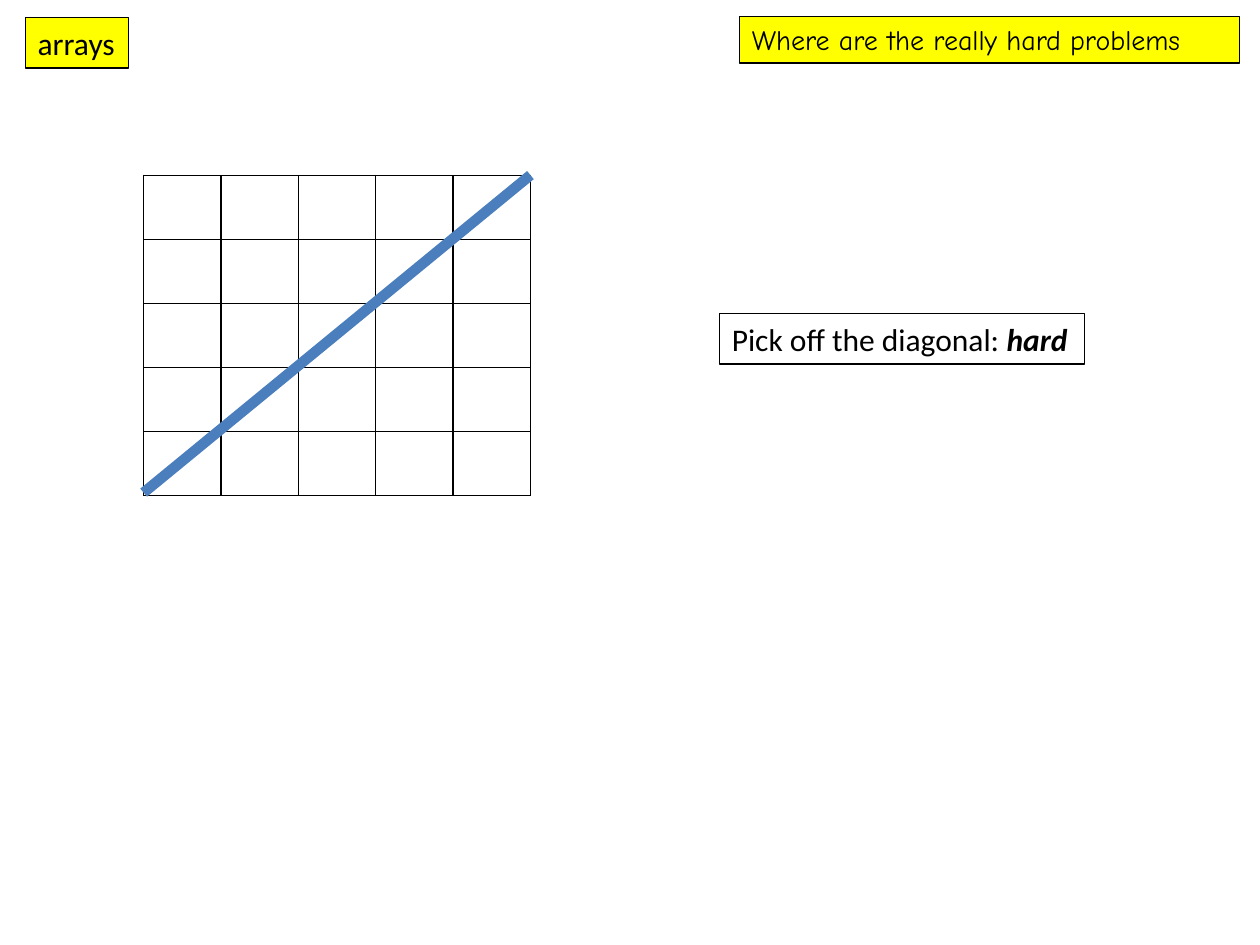
import dataclasses
from typing import Optional

import lxml.etree
import pptx
import pptx.dml.color
import pptx.enum.shapes
import pptx.enum.text
import pptx.oxml.ns
import pptx.slide
import pptx.table
import pptx.util

COLOURS = {"ink": "000000", "label": "FFFF00", "diagonal": "4B7EBC"}
GRID_SIZE = 5
GRID_LEFT, GRID_TOP = 82.08, 100.08
CELL_WIDTH, CELL_HEIGHT = 44.21, 36.58
BORDER_WIDTH = 0.75


@dataclasses.dataclass(frozen=True)
class Label:
    """A framed line of text, with an optional emphasised ending."""

    text: str
    left: float
    top: float
    width: float
    height: float
    size: float = 18
    font: str = "Calibri"
    fill: Optional[str] = None
    emphasis: str = ""


HEADING = Label("Where are the really hard problems", 422.64, 9.36, 285.84, 26.64,
                size=16, font="Comic Neue", fill="label")
LABELS = (
    Label("arrays", 14.4, 10.08, 59.04, 28.8, fill="label"),
    Label("Pick off the diagonal: ", 411.12, 179.28, 208.8, 28.8, emphasis="hard"),
)


def colour(name: str) -> pptx.dml.color.RGBColor:
    """Return the named colour."""
    return pptx.dml.color.RGBColor.from_string(COLOURS[name])


def draw_label(slide: pptx.slide.Slide, label: Label) -> None:
    """Draw one framed label."""
    shape = slide.shapes.add_textbox(
        *map(pptx.util.Pt, (label.left, label.top, label.width, label.height)))
    shape.line.color.rgb = colour("ink")
    shape.line.width = pptx.util.Pt(BORDER_WIDTH)
    if label.fill:
        shape.fill.solid()
        shape.fill.fore_color.rgb = colour(label.fill)
    text_frame = shape.text_frame
    text_frame.word_wrap = False
    text_frame.auto_size = pptx.enum.text.MSO_AUTO_SIZE.SHAPE_TO_FIT_TEXT
    text_frame.text = label.text
    paragraph = text_frame.paragraphs[0]
    if label.emphasis:
        run = paragraph.add_run()
        run.text = label.emphasis
        run.font.bold = run.font.italic = True
    for run in paragraph.runs:
        run.font.name = label.font
        run.font.size = pptx.util.Pt(label.size)
        run.font.color.rgb = colour("ink")


def style_cell(cell: pptx.table._Cell) -> None:
    """Clear the fill of a cell and rule its four sides."""
    cell.fill.background()
    properties = cell._tc.get_or_add_tcPr()
    for position, side in enumerate(("lnL", "lnR", "lnT", "lnB")):
        border = lxml.etree.Element(pptx.oxml.ns.qn(f"a:{side}"),
                                    w=str(pptx.util.Pt(BORDER_WIDTH)))
        fill = lxml.etree.SubElement(border, pptx.oxml.ns.qn("a:solidFill"))
        lxml.etree.SubElement(fill, pptx.oxml.ns.qn("a:srgbClr"), val=COLOURS["ink"])
        properties.insert(position, border)


def draw_grid(slide: pptx.slide.Slide) -> None:
    """Draw the empty square array."""
    table = slide.shapes.add_table(
        GRID_SIZE, GRID_SIZE, pptx.util.Pt(GRID_LEFT), pptx.util.Pt(GRID_TOP),
        pptx.util.Pt(GRID_SIZE * CELL_WIDTH), pptx.util.Pt(GRID_SIZE * CELL_HEIGHT)).table
    table.first_row = table.horz_banding = False
    for column in table.columns:
        column.width = pptx.util.Pt(CELL_WIDTH)
    for row in table.rows:
        row.height = pptx.util.Pt(CELL_HEIGHT)
    for cell in table.iter_cells():
        style_cell(cell)


def draw_diagonal(slide: pptx.slide.Slide) -> None:
    """Draw the thick line from the lower left to the upper right of the array."""
    connector = slide.shapes.add_connector(
        pptx.enum.shapes.MSO_CONNECTOR.STRAIGHT,
        pptx.util.Pt(GRID_LEFT), pptx.util.Pt(281.52),
        pptx.util.Pt(GRID_LEFT + GRID_SIZE * CELL_WIDTH), pptx.util.Pt(GRID_TOP))
    connector.line.color.rgb = colour("diagonal")
    connector.line.width = pptx.util.Pt(6)
    lxml.etree.SubElement(connector._element.spPr, pptx.oxml.ns.qn("a:effectLst"))


def main() -> None:
    """Build and save the slide."""
    presentation = pptx.Presentation()
    presentation.slide_width = pptx.util.Pt(720)
    presentation.slide_height = pptx.util.Pt(540)
    slide = presentation.slides.add_slide(presentation.slide_layouts[6])
    draw_label(slide, HEADING)
    draw_grid(slide)
    for label in LABELS:
        draw_label(slide, label)
    draw_diagonal(slide)
    presentation.save("out.pptx")


if __name__ == "__main__":
    main()
